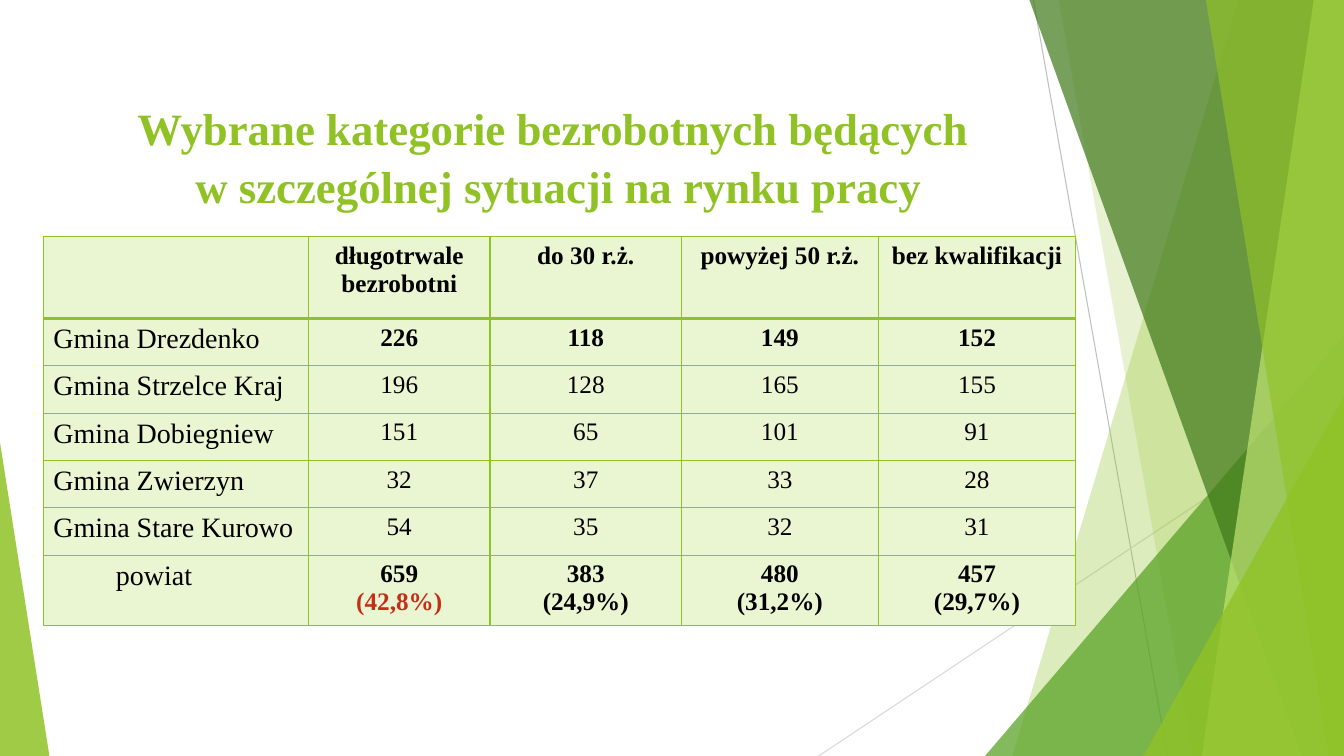
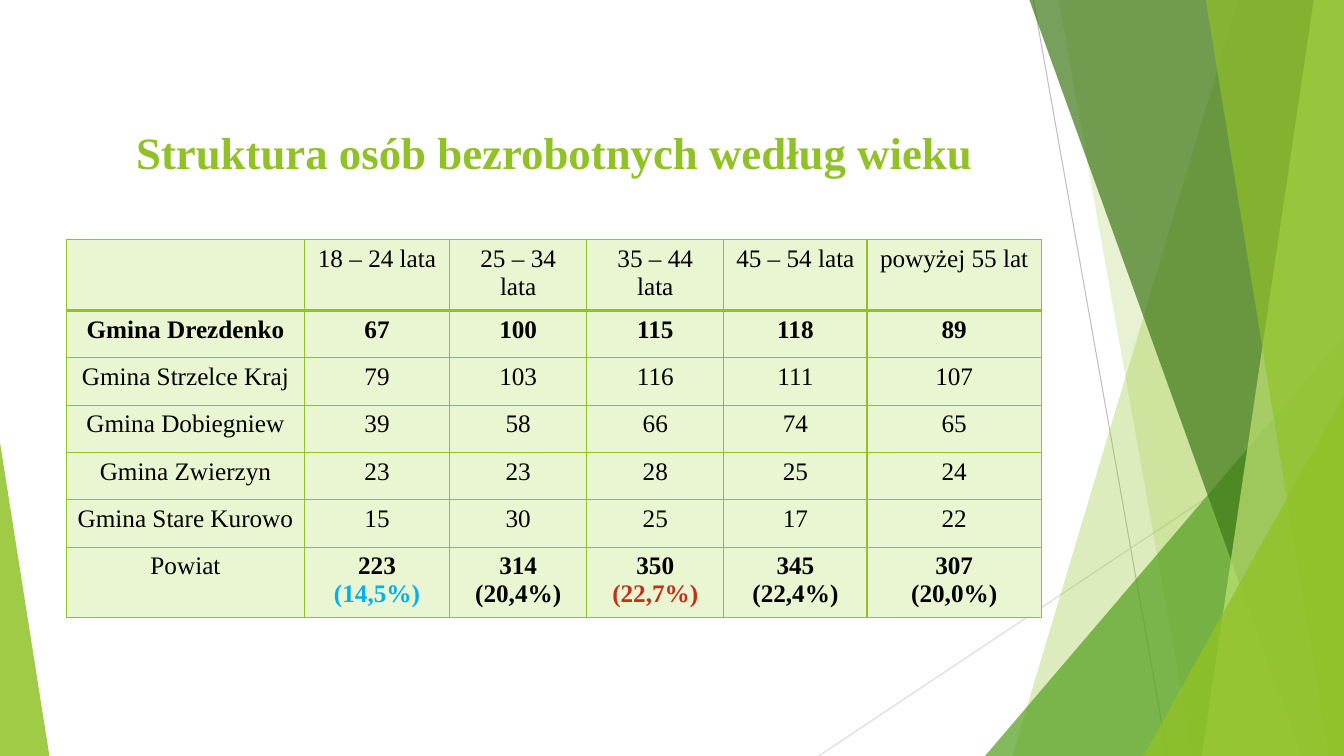
from lxml import etree
from pptx import Presentation
from pptx import util as u
from pptx.dml import color
from pptx.enum import shapes, text
from pptx.oxml import ns

GREEN, MID, DARK, LIME = "90C226", "54A021", "3F7819", "C0E474"
CELL, BLACK, RED, BLUE = "EAF6D1", "000000", "C42F1A", "00B0F0"
W, H = 13.33, 7.5


def rgb(value):
    return color.RGBColor.from_string(value)


def sub(parent, tag, **attrs):
    return etree.SubElement(parent, ns.qn(tag), **attrs)


class Deck:
    """Shared style and the current slide."""

    font = {"name": "Times New Roman", "size": u.Pt(18), "bold": False}
    title_font = {**font, "size": u.Pt(32), "bold": True}

    def __init__(self):
        self.prs = Presentation()
        self.prs.slide_width, self.prs.slide_height = u.Inches(W), u.Inches(H)
        self.s = None

    def slide(self):
        self.s = self.prs.slides.add_slide(self.prs.slide_layouts[6])
        self.background()

    def run(self, p, words, fmt, tint):
        r = p.add_run()
        r.text = words
        for name, value in fmt.items():
            setattr(r.font, name, value)
        r.font.color.rgb = rgb(tint)

    # Background facets
    def line(self, x1, y1, x2, y2, tint):
        sp = self.s.shapes.add_connector(
            shapes.MSO_CONNECTOR.STRAIGHT, *map(u.Inches, (x1, y1, x2, y2)))
        sp.line.color.rgb = rgb(tint)
        sp.line.width = u.Pt(0.75)
        sub(sp._element.spPr, "a:effectLst")

    def paint(self, sp, tint, opacity):
        sp.shadow.inherit = False
        sp.line.fill.background()
        sp.fill.solid()
        sp.fill.fore_color.rgb = rgb(tint)
        clr = sp._element.spPr.find(ns.qn("a:solidFill"))[0]
        sub(clr, "a:alpha", val=str(opacity * 1000))

    def facet(self, top_x, bottom_x, tint, opacity):
        """Band from a slanted left edge to the right side of the slide."""
        points = [(u.Inches(x), u.Inches(y)) for x, y in
                  ((top_x, 0), (W, 0), (W, H), (bottom_x, H))]
        fb = self.s.shapes.build_freeform(*points[0], scale=1.0)
        fb.add_line_segments(points[1:], close=True)
        self.paint(fb.convert_to_shape(), tint, opacity)

    def triangle(self, x, y, w, apex, tint, opacity):
        """Triangle standing on the bottom edge of the slide."""
        sp = self.s.shapes.add_shape(
            shapes.MSO_SHAPE.ISOSCELES_TRIANGLE,
            *map(u.Inches, (x, y, w, H - y)))
        sp.adjustments[0] = apex
        self.paint(sp, tint, opacity)

    def background(self):
        self.line(10.25, 0, 11.58, H, "BFBFBF")
        self.line(W, 4.03, 8.12, H, "D9D9D9")
        self.facet(12.28, 10.04, GREEN, 30)
        self.facet(10.5, 11.83, GREEN, 20)
        self.triangle(9.77, 3.33, 3.56, 1, MID, 72)
        self.facet(10.21, 12.91, DARK, 70)
        self.facet(13.03, 11.92, LIME, 70)
        self.facet(11.96, 13.18, GREEN, 65)
        self.triangle(11.34, 3.93, 1.99, 1, GREEN, 80)
        self.triangle(0, 4.39, 0.49, 0, GREEN, 85)

    # Title
    def title(self, lines, x, y, w, h):
        tf = self.s.shapes.add_textbox(*map(u.Inches, (x, y, w, h))).text_frame
        tf.word_wrap = True
        p = tf.paragraphs[0]
        p.alignment = text.PP_ALIGN.CENTER
        p.line_spacing = 1.08
        for i, words in enumerate(lines):
            if i:
                p.add_line_break()
            self.run(p, words, self.title_font, GREEN)

    # Table
    def borders(self, cell, widths):
        tcPr = cell._tc.get_or_add_tcPr()
        for side, pt in zip("LRTB", widths):
            ln = sub(tcPr, f"a:ln{side}", w=str(u.Pt(pt)))
            sub(sub(ln, "a:solidFill"), "a:srgbClr", val=GREEN)

    def cell(self, cell, words, fmt, align, accents):
        tf = cell.text_frame
        for i, part in enumerate(words.split("\n")):
            p = tf.add_paragraph() if i else tf.paragraphs[0]
            p.alignment = align
            if part:
                self.run(p, part, fmt, accents.get(part, BLACK))

    def table(self, x, y, cols, heights, rows, bold_rows, accents,
              label_size=18, label_align=text.PP_ALIGN.CENTER,
              bold_labels=()):
        frame = self.s.shapes.add_table(
            len(rows), len(cols),
            *map(u.Inches, (x, y, sum(cols), sum(heights))))
        tbl = frame.table
        tbl.first_row = tbl.horz_banding = False
        for col, width in zip(tbl.columns, cols):
            col.width = u.Inches(width)
        for row, height in zip(tbl.rows, heights):
            row.height = u.Inches(height)
        for i, row in enumerate(rows):
            for j, words in enumerate(row):
                c = tbl.cell(i, j)
                self.borders(c, (1, 1, 2 if i == 1 else 1, 1 if i else 2))
                c.fill.solid()
                c.fill.fore_color.rgb = rgb(CELL)
                fmt = {**self.font, "bold": i in (bold_rows if j else bold_labels)}
                if j == 0:
                    fmt["size"] = u.Pt(label_size)
                align = text.PP_ALIGN.CENTER if j else label_align
                self.cell(c, words, fmt, align, accents)
        return tbl


def main():
    deck = Deck()
    body_heights = [0.47] * 5 + [0.65]

    # Groups in a special situation
    deck.slide()
    deck.title(["Wybrane kategorie bezrobotnych będących ",
                "w szczególnej sytuacji na rynku pracy"], 0.84, 0.91, 9.4, 1.44)
    tbl = deck.table(
        0.43, 2.35, [2.63, 1.8, 1.9, 1.95, 1.96], [0.81] + body_heights,
        [["", "długotrwale bezrobotni", "do 30 r.ż.", "powyżej 50 r.ż.",
          "bez kwalifikacji"],
         ["Gmina Drezdenko", "226", "118", "149", "152"],
         ["Gmina Strzelce Kraj", "196", "128", "165", "155"],
         ["Gmina Dobiegniew", "151", "65", "101", "91"],
         ["Gmina Zwierzyn", "32", "37", "33", "28"],
         ["Gmina Stare Kurowo", "54", "35", "32", "31"],
         ["powiat", "659\n(42,8%)", "383\n(24,9%)", "480\n(31,2%)",
          "457\n(29,7%)"]],
        bold_rows=(0, 1, 6), accents={"(42,8%)": RED},
        label_size=20, label_align=text.PP_ALIGN.LEFT)
    tbl.cell(6, 0).margin_left = u.Inches(0.72)

    # Age structure
    deck.slide()
    deck.title(["Struktura osób bezrobotnych według wieku"],
               0.66, 1.15, 9.68, 1.06)
    deck.table(
        0.66, 2.38, [2.36, 1.44, 1.36, 1.36, 1.42, 1.73], [0.65] + body_heights,
        [["", "18 – 24 lata", "25 – 34 lata", "35 – 44 lata", "45 – 54 lata",
          "powyżej 55 lat"],
         ["Gmina Drezdenko", "67", "100", "115", "118", "89"],
         ["Gmina Strzelce Kraj", "79", "103", "116", "111", "107"],
         ["Gmina Dobiegniew", "39", "58", "66", "74", "65"],
         ["Gmina Zwierzyn", "23", "23", "28", "25", "24"],
         ["Gmina Stare Kurowo", "15", "30", "25", "17", "22"],
         ["Powiat", "223\n(14,5%)", "314\n(20,4%)", "350\n(22,7%)",
          "345\n(22,4%)", "307\n(20,0%)"]],
        bold_rows=(1, 6), accents={"(14,5%)": BLUE, "(22,7%)": RED},
        bold_labels=(1,))

    deck.prs.save("out.pptx")


if __name__ == "__main__":
    main()
